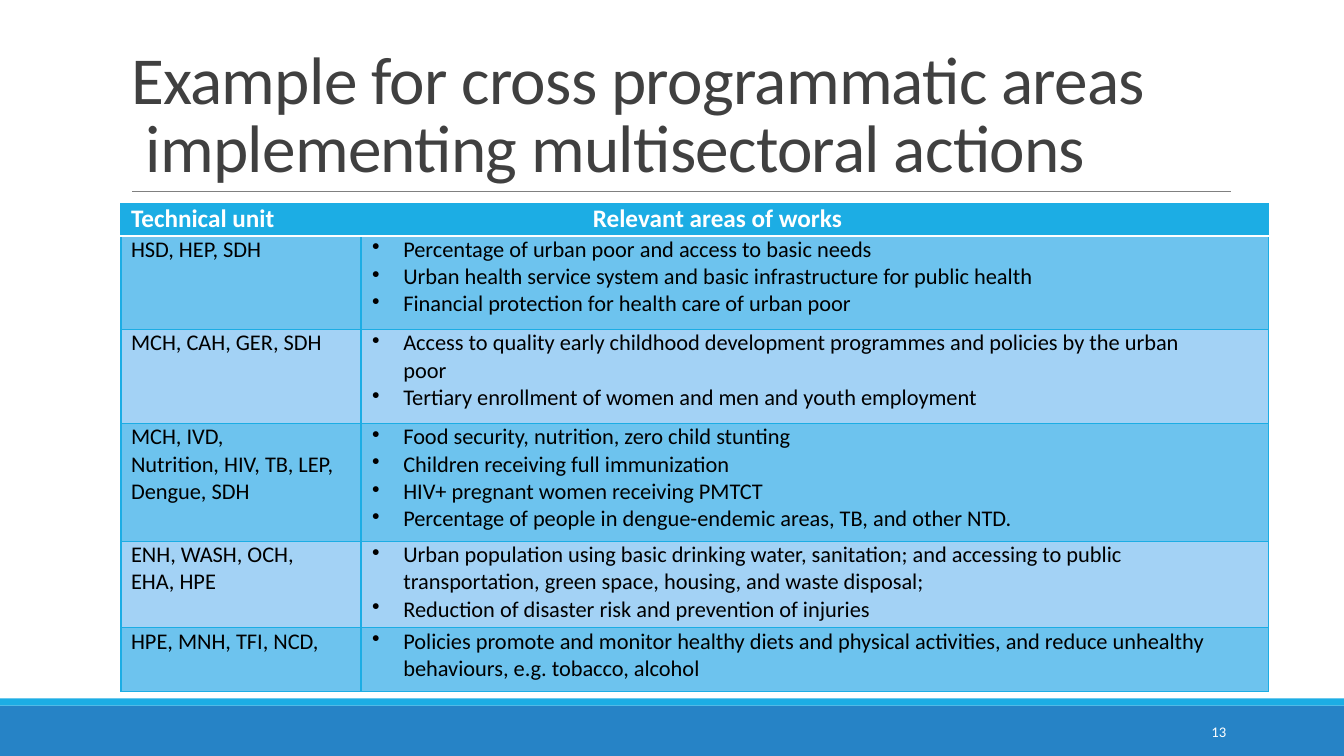
"""Build the slide on cross programmatic areas and multisectoral actions."""
from dataclasses import dataclass

from lxml import etree
from pptx import Presentation
from pptx.dml.color import RGBColor
from pptx.enum import shapes, text
from pptx.oxml import ns
from pptx.util import Inches, Pt

TITLE = "Example for cross programmatic areas\v implementing multisectoral actions"
PAGE = "13"
HEADER = ("Technical unit", "Relevant areas of works")
ROWS = [
    {"units": ["HSD, HEP, SDH"], "height": 0.93,
     "areas": ["Percentage of urban poor and access to basic needs",
               "Urban health service system and basic infrastructure for public health",
               "Financial protection for health care of urban poor"]},
    {"units": ["MCH, CAH, GER, SDH"], "height": 0.93,
     "areas": ["Access to quality early childhood development programmes and policies by the urban poor",
               "Tertiary enrollment of women and men and youth employment"]},
    {"units": ["MCH, IVD,", "Nutrition, HIV, TB, LEP, Dengue, SDH"], "height": 1.17,
     "areas": ["Food security, nutrition, zero child stunting",
               "Children receiving full immunization",
               "HIV+ pregnant women receiving PMTCT",
               "Percentage of people in dengue-endemic areas, TB, and other NTD."]},
    {"units": ["ENH, WASH, OCH, EHA, HPE"], "height": 0.86, "unit_margin": 0.5,
     "areas": ["Urban population using basic drinking water, sanitation; and accessing to public "
               "transportation, green space, housing, and waste disposal;",
               "Reduction of disaster risk and prevention of injuries"]},
    {"units": ["HPE, MNH, TFI, NCD,"], "height": 0.63,
     "areas": ["Policies promote and monitor healthy diets and physical activities, "
               "and reduce unhealthy behaviours, e.g. tobacco, alcohol"]},
]
COLUMNS = (2.38, 9)
HEADER_HEIGHT = 0.32


@dataclass(frozen=True)
class Theme:
    font: str = "Calibri"
    title: str = "404040"
    body: str = "000000"
    white: str = "FFFFFF"
    accent: str = "1CADE4"
    footer: str = "2683C6"
    rule: str = "808080"
    bands: tuple = ("6DC3EE", "A3D2F5")
    title_size: float = 48
    header_size: float = 18
    body_size: float = 16
    page_size: float = 10.5


THEME = Theme()


def write(frame, lines, size, color, bold=False, align=text.PP_ALIGN.LEFT,
          left=0, hanging=0, bullet=None, spacing=None, tracking=0):
    frame.word_wrap = True
    for index, line in enumerate(lines):
        paragraph = frame.add_paragraph() if index else frame.paragraphs[0]
        paragraph.text = line
        paragraph.alignment = align
        if spacing:
            paragraph.line_spacing = spacing
        properties = paragraph._p.get_or_add_pPr()
        properties.set("marL", str(Inches(left)))
        properties.set("indent", str(Inches(-hanging)))
        if bullet:
            etree.SubElement(properties, ns.qn("a:buChar"), char=bullet)
        for run in paragraph.runs:
            run.font.name = THEME.font
            run.font.size = Pt(size)
            run.font.bold = bold
            run.font.color.rgb = RGBColor.from_string(color)
            if tracking:
                run._r.get_or_add_rPr().set("spc", str(round(tracking * 100)))


def add_band(slide, top, height, color):
    band = slide.shapes.add_shape(shapes.MSO_SHAPE.RECTANGLE, 0, Inches(top),
                                  Inches(13.33), Inches(height))
    band.shadow.inherit = False
    band.fill.solid()
    band.fill.fore_color.rgb = RGBColor.from_string(color)
    band.line.fill.background()


def add_rule(slide):
    rule = slide.shapes.add_connector(shapes.MSO_CONNECTOR.STRAIGHT, Inches(1.31),
                                      Inches(1.9), Inches(12.21), Inches(1.9))
    rule.line.color.rgb = RGBColor.from_string(THEME.rule)
    rule.line.width = Pt(0.5)
    etree.SubElement(rule._element.spPr, ns.qn("a:effectLst"))


def style_cell(cell, fill, right=0.1, top=THEME.accent, bottom=THEME.accent):
    cell.margin_left = cell.margin_top = cell.margin_bottom = 0
    cell.margin_right = Inches(right)
    cell.fill.solid()
    cell.fill.fore_color.rgb = RGBColor.from_string(fill)
    properties = cell._tc.get_or_add_tcPr()
    edges = {"lnL": THEME.accent, "lnR": THEME.accent, "lnT": top, "lnB": bottom}
    for index, (edge, color) in enumerate(edges.items()):
        width = Pt(1.25 if color == THEME.white else 1)
        line = etree.Element(ns.qn(f"a:{edge}"), w=str(width))
        solid = etree.SubElement(line, ns.qn("a:solidFill"))
        etree.SubElement(solid, ns.qn("a:srgbClr"), val=color)
        properties.insert(index, line)


def add_areas_table(slide):
    heights = [HEADER_HEIGHT] + [row["height"] for row in ROWS]
    table = slide.shapes.add_table(len(heights), len(COLUMNS), Inches(1.2), Inches(2.02),
                                   Inches(sum(COLUMNS)), Inches(sum(heights))).table
    table.horz_banding = False
    for column, width in zip(table.columns, COLUMNS):
        column.width = Inches(width)
    for row, height in zip(table.rows, heights):
        row.height = Inches(height)
    for index, (label, left) in enumerate(zip(HEADER, (0.1, 2.3))):
        cell = table.cell(0, index)
        style_cell(cell, THEME.accent, bottom=THEME.white)
        write(cell.text_frame, [label], THEME.header_size, THEME.white, bold=True, left=left)
    for index, row in enumerate(ROWS, 1):
        fill = THEME.bands[(index - 1) % 2]
        top = THEME.white if index == 1 else THEME.accent
        units, areas = table.cell(index, 0), table.cell(index, 1)
        style_cell(units, fill, right=row.get("unit_margin", 0.1), top=top)
        style_cell(areas, fill, right=0.5, top=top)
        write(units.text_frame, row["units"], THEME.body_size, THEME.body, left=0.1)
        write(areas.text_frame, row["areas"], THEME.body_size, THEME.body,
              left=0.42, hanging=0.31, bullet="•")


def main():
    presentation = Presentation()
    presentation.slide_width, presentation.slide_height = Inches(13.33), Inches(7.5)
    slide = presentation.slides.add_slide(presentation.slide_layouts[5])
    add_band(slide, 7, 0.5, THEME.footer)
    add_band(slide, 6.93, 0.07, THEME.accent)
    add_rule(slide)

    title = slide.shapes.title
    title.left, title.top, title.width, title.height = map(Inches, (1.2, 0.31, 11, 1.59))
    title.text_frame.auto_size = text.MSO_AUTO_SIZE.NONE
    title.text_frame.vertical_anchor = text.MSO_ANCHOR.BOTTOM
    write(title.text_frame, [TITLE], THEME.title_size, THEME.title,
          spacing=0.85, tracking=-0.5)

    add_areas_table(slide)
    page = slide.shapes.add_textbox(Inches(10.83), Inches(7.06), Inches(1.43), Inches(0.4))
    page.text_frame.vertical_anchor = text.MSO_ANCHOR.MIDDLE
    write(page.text_frame, [PAGE], THEME.page_size, THEME.white, align=text.PP_ALIGN.RIGHT)
    presentation.save("out.pptx")


if __name__ == "__main__":
    main()
